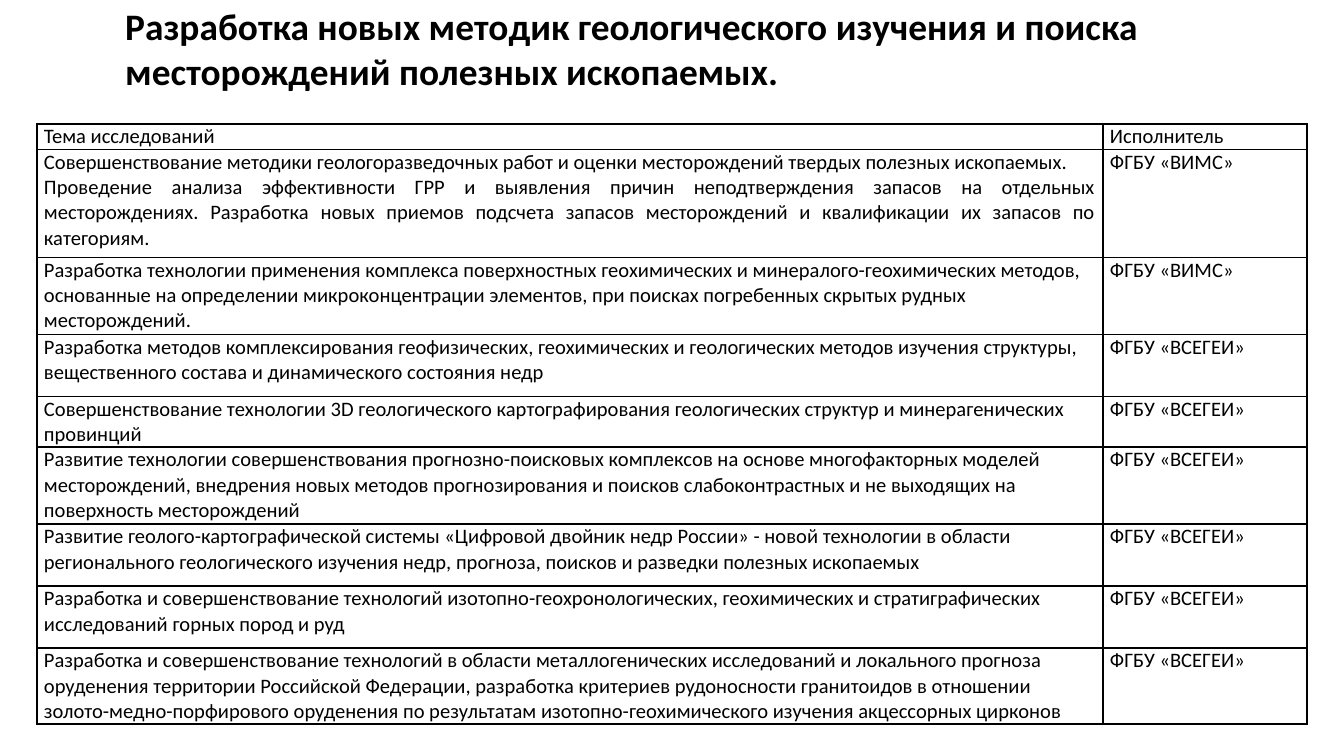
from lxml import etree
from pptx import Presentation
from pptx.dml.color import RGBColor
from pptx.enum.text import MSO_ANCHOR, PP_ALIGN
from pptx.oxml.ns import qn
from pptx.util import Pt

LEFT, JUSTIFY = PP_ALIGN.LEFT, PP_ALIGN.JUSTIFY
TOP = MSO_ANCHOR.TOP
PX = 914400 / 134.4
COLORS = {"text": "000000", "border": "000000", "background": "FFFFFF"}
VIMS = [(JUSTIFY, "ФГБУ «ВИМС»")]
VSEGEI = [(LEFT, "ФГБУ «ВСЕГЕИ»")]

TITLE = "Разработка новых методик геологического изучения и поиска месторождений полезных ископаемых."
COLUMNS = [1066, 204]
ROWS = [
    (25, [(JUSTIFY, "Тема исследований")], [(JUSTIFY, "Исполнитель")]),
    (108, [
        (LEFT, "Совершенствование методики геологоразведочных работ и оценки месторождений твердых полезных ископаемых."),
        (JUSTIFY, "Проведение анализа эффективности ГРР и выявления причин неподтверждения запасов на отдельных "
                  "месторождениях. Разработка новых приемов подсчета запасов месторождений и квалификации их "
                  "запасов по категориям."),
    ], VIMS),
    (77, [(LEFT, "Разработка технологии применения комплекса поверхностных геохимических и минералого-геохимических "
                 "методов, основанные на определении микроконцентрации элементов, при поисках погребенных скрытых "
                 "рудных месторождений.")], VIMS),
    (62, [(LEFT, "Разработка методов комплексирования геофизических, геохимических и геологических методов изучения "
                 "структуры, вещественного состава и динамического состояния недр")], VSEGEI),
    (50, [(LEFT, "Совершенствование технологии 3D геологического картографирования геологических структур и "
                 "минерагенических провинций")], VSEGEI),
    (77, [(LEFT, "Развитие технологии совершенствования прогнозно-поисковых комплексов на основе многофакторных "
                 "моделей месторождений, внедрения новых методов прогнозирования и поисков слабоконтрастных и не "
                 "выходящих на поверхность месторождений")], VSEGEI),
    (62, [(LEFT, "Развитие геолого-картографической системы «Цифровой двойник недр России» - новой технологии в "
                 "области регионального геологического изучения недр, прогноза, поисков и разведки полезных "
                 "ископаемых")], VSEGEI),
    (62, [(LEFT, "Разработка и совершенствование технологий изотопно-геохронологических, геохимических и "
                 "стратиграфических исследований горных пород и руд")], VSEGEI),
    (76, [(LEFT, "Разработка и совершенствование технологий в области металлогенических исследований и локального "
                 "прогноза оруденения территории Российской Федерации, разработка критериев рудоносности "
                 "гранитоидов в отношении золото-медно-порфирового оруденения по результатам "
                 "изотопно-геохимического изучения акцессорных цирконов")], VSEGEI),
]


def px(n):
    return round(n * PX)


class Deck:
    font = "Calibri"

    def __init__(self, width, height):
        self.prs = Presentation()
        self.prs.slide_width, self.prs.slide_height = px(width), px(height)
        self.s = self.prs.slides.add_slide(self.prs.slide_layouts[6])
        fill = self.s.background.fill
        fill.solid()
        fill.fore_color.rgb = RGBColor.from_string(COLORS["background"])

    def paragraphs(self, tf, items, size, bold=False):
        tf.word_wrap = True
        for i, (align, text) in enumerate(items):
            p = tf.add_paragraph() if i else tf.paragraphs[0]
            p.alignment = align
            r = p.add_run()
            r.text = text
            r.font.name, r.font.size, r.font.bold = self.font, Pt(size), bold
            r.font.color.rgb = RGBColor.from_string(COLORS["text"])

    def text(self, x, y, w, h, text, size):
        tf = self.s.shapes.add_textbox(px(x), px(y), px(w), px(h)).text_frame
        tf.vertical_anchor = TOP
        self.paragraphs(tf, [(LEFT, text)], size, True)

    def borders(self, cell):
        tcPr = cell._tc.get_or_add_tcPr()
        for i, side in enumerate(("lnL", "lnR", "lnT", "lnB")):
            ln = etree.Element(qn("a:" + side), w=str(Pt(1)))
            fill = etree.SubElement(ln, qn("a:solidFill"))
            etree.SubElement(fill, qn("a:srgbClr"), val=COLORS["border"])
            tcPr.insert(i, ln)

    def table(self, x, y, columns, rows, size):
        height = sum(row[0] for row in rows)
        table = self.s.shapes.add_table(
            len(rows), len(columns), px(x), px(y), px(sum(columns)), px(height)).table
        table.first_row = table.horz_banding = False
        for column, width in zip(table.columns, columns):
            column.width = px(width)
        for row, (row_height, *contents) in zip(table.rows, rows):
            row.height = px(row_height)
            for cell, items in zip(row.cells, contents):
                cell.margin_left = cell.margin_right = px(7)
                cell.margin_top = cell.margin_bottom = 0
                cell.fill.background()
                self.borders(cell)
                self.paragraphs(cell.text_frame, items, size)


def main():
    deck = Deck(1344, 756)
    deck.table(37, 124, COLUMNS, ROWS, 11)
    deck.text(112, -3, 1169, 145, TITLE, 20)
    deck.prs.save("out.pptx")


if __name__ == "__main__":
    main()
